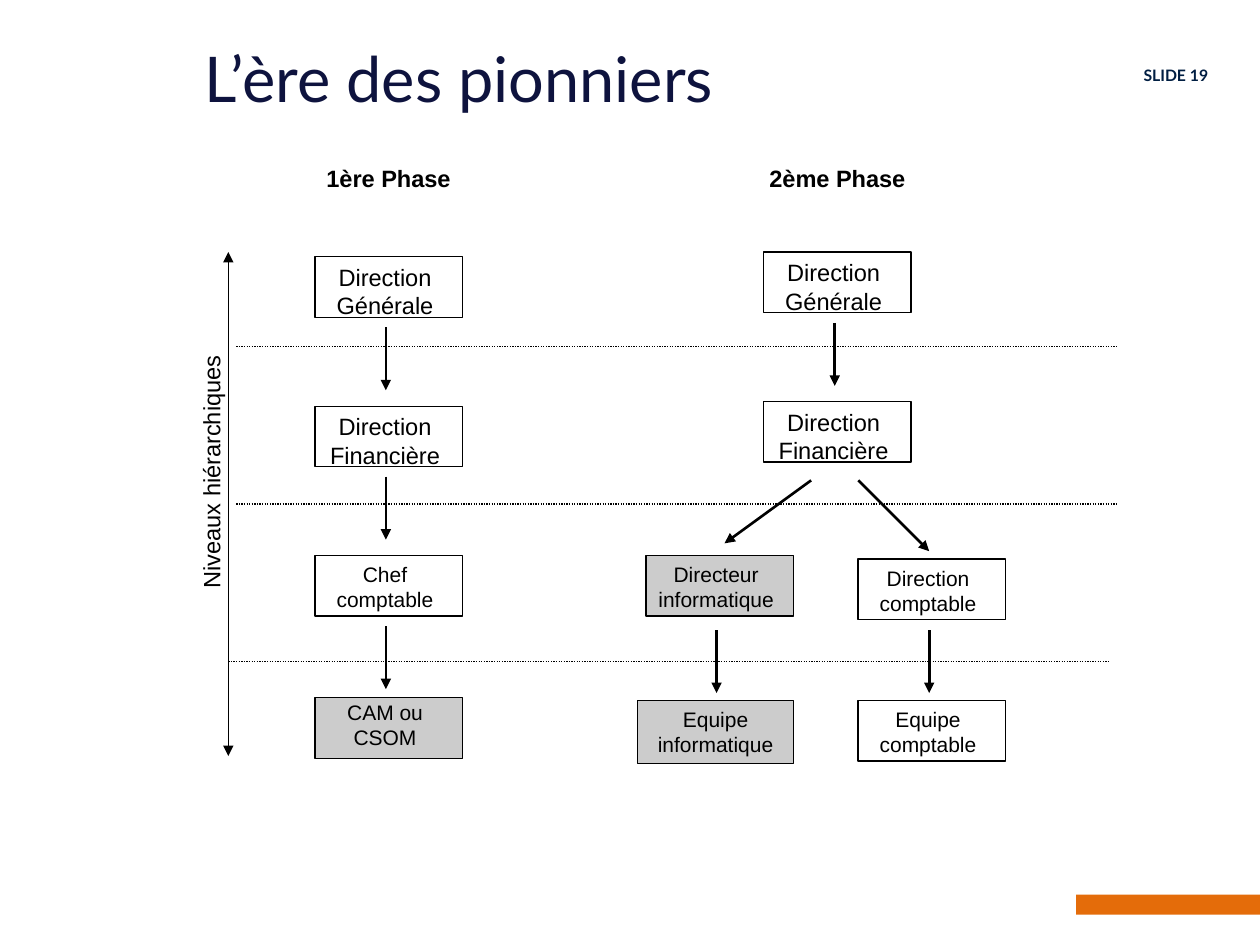
from dataclasses import dataclass

from lxml import etree
from pptx import Presentation
from pptx.dml.color import RGBColor
from pptx.enum.dml import MSO_LINE
from pptx.enum.shapes import MSO_CONNECTOR, MSO_SHAPE
from pptx.enum.text import MSO_ANCHOR, MSO_AUTO_SIZE, PP_ALIGN
from pptx.oxml.ns import qn
from pptx.shapes.autoshape import Shape
from pptx.slide import Slide
from pptx.text.text import TextFrame
from pptx.util import Pt

RECTANGLE = MSO_SHAPE.RECTANGLE
STRAIGHT = MSO_CONNECTOR.STRAIGHT
DOTTED = MSO_LINE.ROUND_DOT
TOP, BOTTOM = MSO_ANCHOR.TOP, MSO_ANCHOR.BOTTOM
LEFT, CENTER, RIGHT = PP_ALIGN.LEFT, PP_ALIGN.CENTER, PP_ALIGN.RIGHT
NO_AUTOFIT = MSO_AUTO_SIZE.NONE


@dataclass(frozen=True)
class Theme:
    black: RGBColor = RGBColor(0, 0, 0)
    navy: RGBColor = RGBColor(0x0E, 0x13, 0x3E)
    number: RGBColor = RGBColor(0x00, 0x1E, 0x42)
    orange: RGBColor = RGBColor(0xE4, 0x6C, 0x0A)
    grey: RGBColor = RGBColor(0xCC, 0xCC, 0xCC)
    heading_font: str = "Lato"
    body_font: str = "Arial"
    title_size: float = 36
    large: float = 13.5
    small: float = 12
    number_size: float = 9
    thin: float = 0.75
    thick: float = 1.5


THEME = Theme()


@dataclass(frozen=True)
class Box:
    text: str
    left: float
    top: float
    size: float = THEME.large
    shaded: bool = False
    width: float = 84.3
    height: float = 34.6
    margins: tuple[float, float, float, float] = (2.9, 3.6, 7.2, 3.6)


@dataclass(frozen=True)
class Line:
    start: tuple[float, float]
    end: tuple[float, float]
    width: float = THEME.thick
    head: bool = False
    tail: bool = True
    dotted: bool = False


@dataclass(frozen=True)
class Label:
    text: str
    left: float
    top: float
    width: float
    height: float
    align: PP_ALIGN = CENTER
    bold: bool = False
    rotation: float = 0
    font: str = THEME.body_font
    size: float = THEME.large
    color: RGBColor = THEME.black
    margins: tuple[float, float, float, float] = (7.2, 3.6, 7.2, 3.6)


def place(shape: Shape, left: float, top: float, width: float, height: float) -> None:
    shape.left, shape.top = Pt(left), Pt(top)
    shape.width, shape.height = Pt(width), Pt(height)


def write(frame: TextFrame, text: str, font: str, size: float, color: RGBColor,
          align: PP_ALIGN, margins: tuple[float, float, float, float],
          bold: bool = False, anchor: MSO_ANCHOR = TOP) -> None:
    frame.text = text
    frame.word_wrap = True
    frame.auto_size = NO_AUTOFIT
    frame.vertical_anchor = anchor
    (frame.margin_left, frame.margin_top,
     frame.margin_right, frame.margin_bottom) = map(Pt, margins)
    paragraph = frame.paragraphs[0]
    paragraph.alignment = align
    for run in paragraph.runs:
        run.font.name, run.font.size, run.font.bold = font, Pt(size), bold
        run.font.color.rgb = color


def draw_box(slide: Slide, box: Box) -> None:
    shape = slide.shapes.add_shape(RECTANGLE, Pt(box.left), Pt(box.top),
                                   Pt(box.width), Pt(box.height))
    shape.shadow.inherit = False
    if box.shaded:
        shape.fill.solid()
        shape.fill.fore_color.rgb = THEME.grey
    else:
        shape.fill.background()
    shape.line.color.rgb = THEME.black
    shape.line.width = Pt(THEME.thin)
    write(shape.text_frame, box.text, THEME.body_font, box.size, THEME.black,
          CENTER, box.margins)


def draw_line(slide: Slide, line: Line) -> None:
    connector = slide.shapes.add_connector(STRAIGHT, *map(Pt, line.start + line.end))
    connector.line.color.rgb = THEME.black
    connector.line.width = Pt(line.width)
    if line.dotted:
        connector.line.dash_style = DOTTED
    outline = connector.line._get_or_add_ln()
    for tag, wanted in (("a:headEnd", line.head), ("a:tailEnd", line.tail)):
        if wanted:
            etree.SubElement(outline, qn(tag)).set("type", "triangle")
    etree.SubElement(connector._element.spPr, qn("a:effectLst"))


def draw_label(slide: Slide, label: Label) -> None:
    shape = slide.shapes.add_textbox(Pt(label.left), Pt(label.top),
                                     Pt(label.width), Pt(label.height))
    shape.rotation = label.rotation
    write(shape.text_frame, label.text, label.font, label.size, label.color,
          label.align, label.margins, label.bold)


def down_arrow(x: float, top: float) -> Line:
    return Line((x, top), (x, top + 36))


def level_divider(left: float, y: float) -> Line:
    return Line((left, y), (left + 504, y), THEME.thin, tail=False, dotted=True)


# Left edges of the box columns
PHASE_ONE, PHASE_TWO, COMPUTING, ACCOUNTING = 180, 436.3, 369.2, 490.3

BOXES = [
    Box("Direction Générale", PHASE_ONE, 146.7),
    Box("Direction Financière", PHASE_ONE, 232.1),
    Box("Chef comptable", PHASE_ONE, 317.4, THEME.small),
    Box("CAM ou CSOM", PHASE_ONE, 398.7, THEME.small, True,
        margins=(2.9, 0.9, 7.2, 3.6)),
    Box("Direction Générale", PHASE_TWO, 144),
    Box("Direction Financière", PHASE_TWO, 229.4),
    Box("Directeur informatique", COMPUTING, 317.4, THEME.small, True),
    Box("Direction comptable", ACCOUNTING, 319.5, THEME.small),
    Box("Equipe informatique", 364.5, 400.3, THEME.small, True, 88.9, 36,
        (7.2, 3.6, 7.2, 3.6)),
    Box("Equipe comptable", ACCOUNTING, 400.3, THEME.small),
]

LINES = [
    *(down_arrow(220.5, 187 + 85.4 * step) for step in range(3)),
    down_arrow(477, 184.5),
    Line((463.5, 274.5), (414, 310.5)),
    Line((490.5, 274.5), (531, 315)),
    down_arrow(409.5, 360),
    down_arrow(531, 360),
    level_divider(135, 198),
    level_divider(135, 288),
    level_divider(130.5, 378),
    Line((130.5, 144), (130.5, 432), THEME.thin, head=True),
]

LABELS = [
    Label("1ère Phase", 162, 90, 120, 46, bold=True),
    Label("2ème Phase", 418.5, 90, 120, 46, bold=True),
    Label("Niveaux hiérarchiques", 33.4, 244.8, 174, 23, LEFT, rotation=270),
    Label("SLIDE 19", 615, 37.4, 75.4, 10.4, RIGHT, True, 0, THEME.heading_font,
          THEME.number_size, THEME.number, (0, 0, 0, 0)),
]


def main() -> None:
    presentation = Presentation()
    presentation.slide_width, presentation.slide_height = Pt(720), Pt(540)
    slide = presentation.slides.add_slide(presentation.slide_layouts[5])

    # Title
    title = slide.shapes.title
    place(title, 117, 0, 485, 66)
    write(title.text_frame, "L’ère des pionniers", THEME.heading_font,
          THEME.title_size, THEME.navy, LEFT, (0, 0, 0, 0), anchor=BOTTOM)
    title.text_frame.paragraphs[0].line_spacing = 0.83

    # Corner bar
    bar = slide.shapes.add_shape(RECTANGLE, Pt(615), Pt(511.2), Pt(105), Pt(11.5))
    bar.shadow.inherit = False
    bar.fill.solid()
    bar.fill.fore_color.rgb = THEME.orange
    bar.line.fill.background()

    # Organisation charts
    for box in BOXES:
        draw_box(slide, box)
    for line in LINES:
        draw_line(slide, line)
    for label in LABELS:
        draw_label(slide, label)

    presentation.save("out.pptx")


if __name__ == "__main__":
    main()
